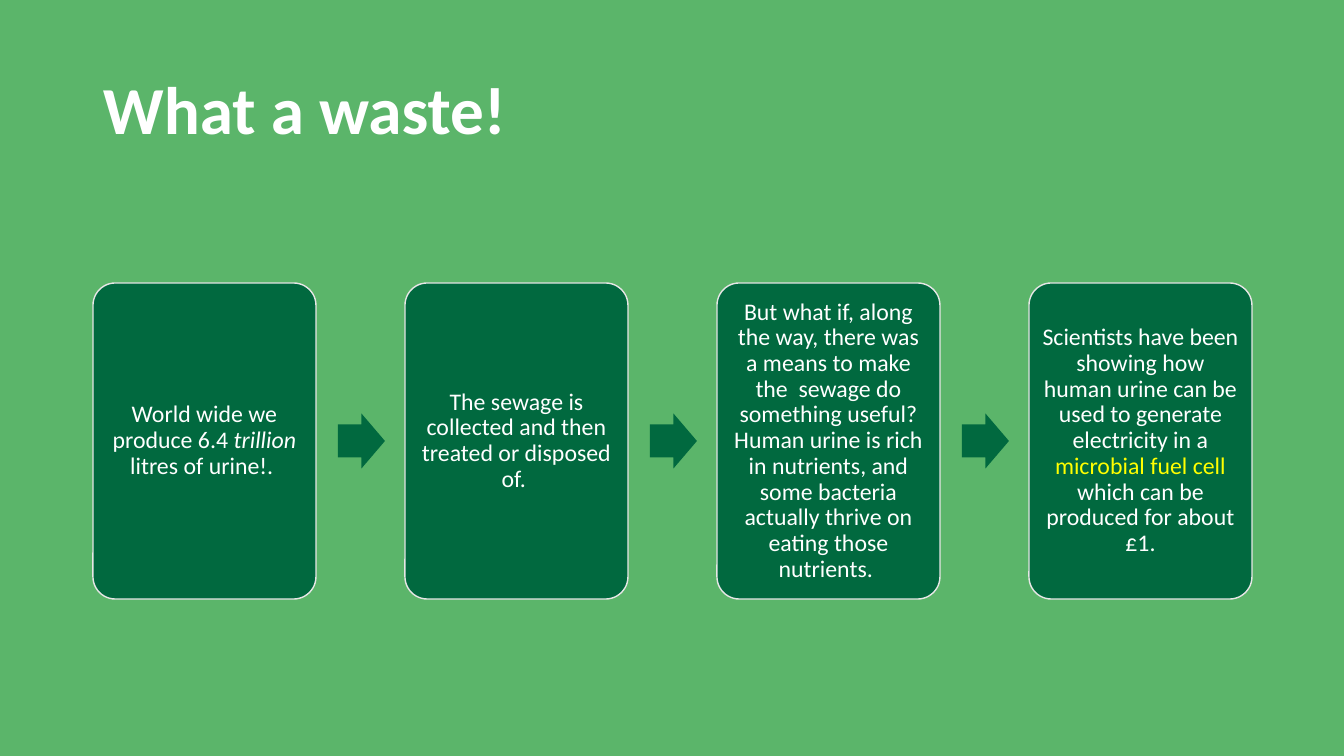
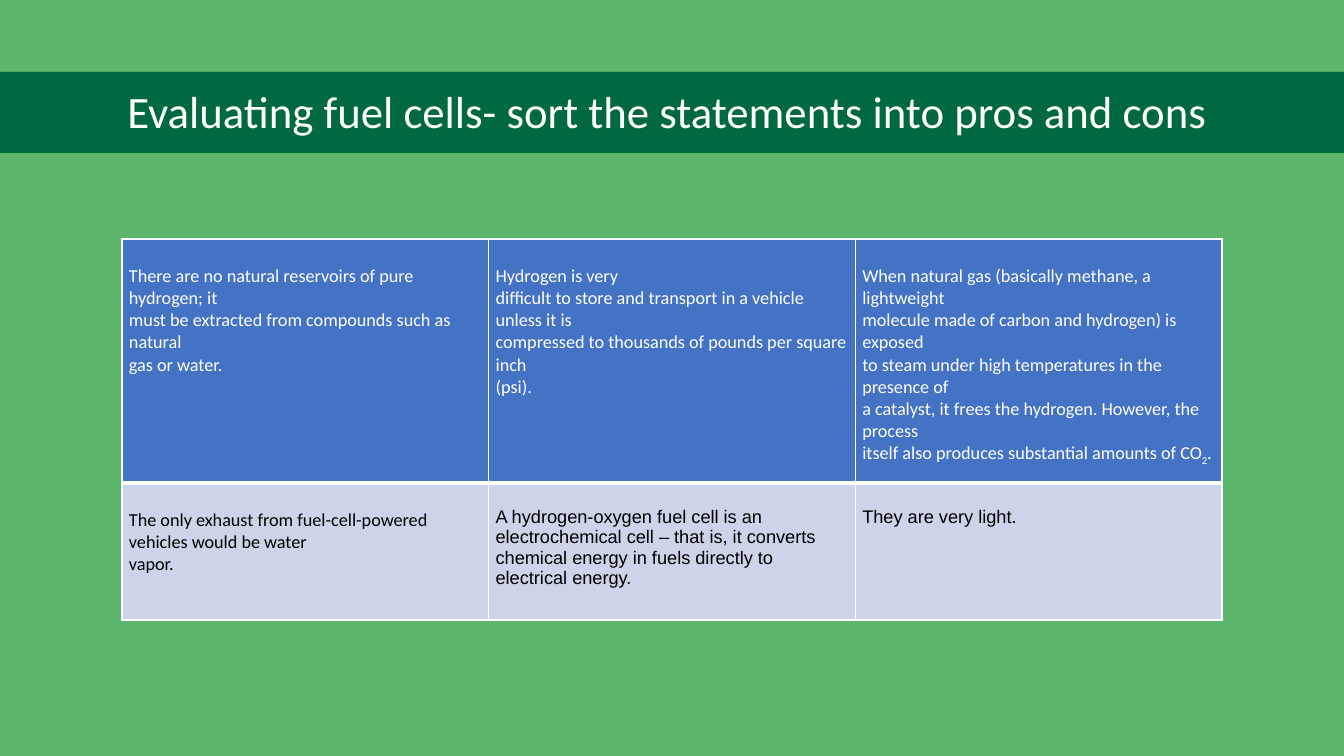
from lxml import etree
from pptx import Presentation
from pptx.dml.color import RGBColor
from pptx.enum.shapes import MSO_SHAPE
from pptx.enum.text import MSO_ANCHOR, PP_ALIGN
from pptx.oxml.ns import qn
from pptx.util import Emu, Pt

ROUND, ARROW, RECT = (MSO_SHAPE.ROUNDED_RECTANGLE, MSO_SHAPE.RIGHT_ARROW,
                      MSO_SHAPE.RECTANGLE)
LEFT, CENTER, MIDDLE = PP_ALIGN.LEFT, PP_ALIGN.CENTER, MSO_ANCHOR.MIDDLE

# Shared look
BACK, DARK, WHITE, PALE, YELLOW, BLACK = (
    "5BB56A", "01693F", "FFFFFF", "E7E6E6", "FFFF00", "000000")
HEAD, BODY = "4472C4", "CDD4EA"
SANS, ARIAL = "Calibri", "Arial"

# Content: a run is plain text or (text, style)
STEPS = [
    ["World wide we produce 6.4 ", ("trillion", "italic"), " litres of urine!. "],
    ["The sewage is collected and then treated or disposed of. "],
    ["But what if, along the way, there was a means to make the  sewage do "
     "something useful? Human urine is rich in nutrients, and some bacteria "
     "actually thrive on eating those nutrients. "],
    ["Scientists have been showing how human urine can be used to generate "
     "electricity in a ", ("microbial fuel cell ", "key"),
     "which can be produced for about £1."],
]
# Each cell: font, then its paragraphs as lists of runs
FACTS = [
    [(SANS, [["There are no natural reservoirs of pure hydrogen; it"],
             ["must be extracted from compounds such as natural"],
             ["gas or water."]]),
     (SANS, [["Hydrogen is very"],
             ["difficult to store and transport in a vehicle unless it is"],
             ["compressed to thousands of pounds per square inch"],
             ["(psi)."]]),
     (SANS, [["When natural gas (basically methane, a lightweight"],
             ["molecule made of carbon and hydrogen) is exposed"],
             ["to steam under high temperatures in the presence of"],
             ["a catalyst, it frees the hydrogen. However, the process"],
             ["itself also produces substantial amounts of CO", ("2", "sub"), "."]])],
    [(SANS, [["The only exhaust from fuel-cell-powered vehicles would be water"],
             ["vapor."]]),
     (ARIAL, [["A hydrogen-oxygen fuel cell is an electrochemical cell – that is, "
               "it converts chemical energy in fuels directly to electrical energy."]]),
     (ARIAL, [["They are very light."]])],
]
ROWS = [(244, HEAD, WHITE), (137, BODY, BLACK)]  # height, fill, text colour
TOPS = {SANS: 26, ARIAL: 24}  # top margin of a cell, by font


def px(n):
    return Emu(round(n * 914400 / 100.8))


def rgb(code):
    return RGBColor.from_string(code)


def write(frame, paras, size, color, font=SANS, align=LEFT, gap=None, bold=False):
    for i, runs in enumerate(paras):
        para = frame.paragraphs[0] if i == 0 else frame.add_paragraph()
        para.alignment = align
        if gap:
            para.line_spacing = gap
        face = para.font
        face.name, face.size, face.bold = font, Pt(size), bold
        face.color.rgb = rgb(color)
        for part in runs:
            text, style = (part, "") if isinstance(part, str) else part
            run = para.add_run()
            run.text = text
            if style == "italic":
                run.font.italic = True
            elif style == "key":
                run.font.color.rgb = rgb(YELLOW)
            elif style == "sub":
                run.font._element.set("baseline", "-25000")


def inset(item, x, top, low):
    item.margin_left = item.margin_right = px(x)
    item.margin_top, item.margin_bottom = px(top), px(low)


def shape(slide, kind, box, line=None):
    item = slide.shapes.add_shape(kind, *map(px, box))
    item.shadow.inherit = False
    item.fill.solid()
    item.fill.fore_color.rgb = rgb(DARK)
    if line:
        item.line.color.rgb = rgb(line)
        item.line.width = Pt(1)
    else:
        item.line.fill.background()
    return item


def title(slide, text, box, size, align=LEFT, bold=False):
    frame = slide.shapes.add_textbox(*map(px, box)).text_frame
    frame.word_wrap = True
    frame.vertical_anchor = MIDDLE
    inset(frame, 10, 5, 5)
    write(frame, [[text]], size, WHITE, align=align, gap=0.9, bold=bold)


def border(cell, side, width):
    props = cell._tc.get_or_add_tcPr()
    line = etree.SubElement(props, qn("a:ln" + side), w=str(Pt(width)))
    fill = etree.SubElement(line, qn("a:solidFill"))
    etree.SubElement(fill, qn("a:srgbClr"), val=WHITE)


def flow(slide):
    title(slide, "What a waste!", (93, 40, 1159, 146), 48, bold=True)
    left, top, wide, high, pitch = 93, 283, 223, 316, 312
    arrow_w, arrow_h, space = 47, 55, 22
    for i, runs in enumerate(STEPS):
        x = left + i * pitch
        card = shape(slide, ROUND, (x, top, wide, high), PALE)
        card.adjustments[0] = 0.1
        frame = card.text_frame
        frame.word_wrap = True
        frame.vertical_anchor = MIDDLE
        inset(frame, 7, 7, 7)
        write(frame, [runs], 17, WHITE, align=CENTER, gap=0.9)
        if i < len(STEPS) - 1:
            arrow = shape(slide, ARROW, (x + wide + space, top + (high - arrow_h) / 2,
                                         arrow_w, arrow_h))
            arrow.adjustments[0], arrow.adjustments[1] = 0.6, 0.5


def sort(slide):
    shape(slide, RECT, (0, 72, 1344, 81))
    title(slide, "Evaluating fuel cells- sort the statements into pros and cons ",
          (93, 75, 1159, 78), 32, CENTER)
    cols, wide = len(FACTS[0]), 1100
    table = slide.shapes.add_table(len(ROWS), cols, px(122), px(239), px(wide),
                                   px(sum(row[0] for row in ROWS))).table
    for col in table.columns:
        col.width = px(wide / cols)
    for r, (high, fill, color) in enumerate(ROWS):
        table.rows[r].height = px(high)
        for c, (font, paras) in enumerate(FACTS[r]):
            cell = table.cell(r, c)
            inset(cell, 7, TOPS[font], 4)
            # The line under the head row is the heavy one
            for side, width in (("L", 1), ("R", 1), ("T", 3 if r == 1 else 1),
                                ("B", 3 if r == 0 else 1)):
                border(cell, side, width)
            cell.fill.solid()
            cell.fill.fore_color.rgb = rgb(fill)
            write(cell.text_frame, paras, 13, color, font)


def main():
    deck = Presentation()
    deck.slide_width, deck.slide_height = px(1344), px(756)
    back = deck.slide_master.background.fill
    back.solid()
    back.fore_color.rgb = rgb(BACK)
    for build in (flow, sort):
        build(deck.slides.add_slide(deck.slide_layouts[6]))
    deck.save("out.pptx")


if __name__ == "__main__":
    main()
